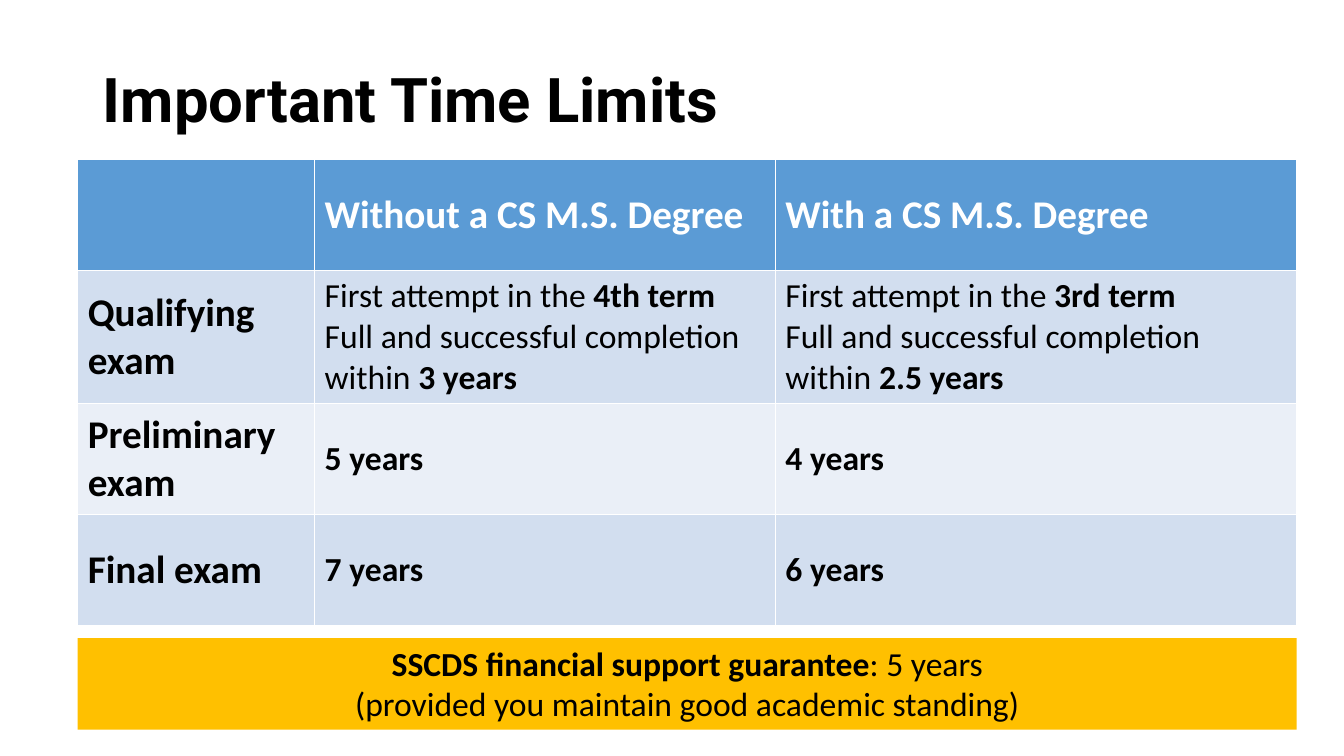
import pptx
import pptx.util
import pptx.dml.color
import pptx.enum.shapes
import pptx.enum.text

Cm = pptx.util.Cm
ANCHOR = pptx.enum.text.MSO_ANCHOR
ALIGN = pptx.enum.text.PP_ALIGN

COLORS = {
    "text": "000000",
    "header_text": "FFFFFF",
    "header": "5B9BD5",
    "band_dark": "D2DEEF",
    "band_light": "EAEFF7",
    "guarantee": "FFC000",
}


def paint(fill, color):
    fill.solid()
    fill.fore_color.rgb = pptx.dml.color.RGBColor.from_string(COLORS[color])


def write(frame, paragraphs, size, color="text", font="Calibri", align=ALIGN.LEFT):
    for index, pieces in enumerate(paragraphs):
        paragraph = frame.paragraphs[0] if index == 0 else frame.add_paragraph()
        paragraph.alignment = align
        for words, bold in pieces:
            run = paragraph.add_run()
            run.text = words
            formats = {"name": font, "size": pptx.util.Pt(size), "bold": bold}
            for key, value in formats.items():
                setattr(run.font, key, value)
            paint(run.font.fill, color)


presentation = pptx.Presentation()
presentation.slide_width = Cm(33.87)
presentation.slide_height = Cm(19.05)
slide = presentation.slides.add_slide(presentation.slide_layouts[5])

left, width = Cm(1.96), Cm(30.72)

heading = slide.shapes.title
placement = {"left": Cm(2.34), "top": Cm(0.74), "width": Cm(29.21), "height": Cm(3.68)}
for key, value in placement.items():
    setattr(heading, key, value)
heading.text_frame.auto_size = pptx.enum.text.MSO_AUTO_SIZE.NONE
heading.text_frame.vertical_anchor = ANCHOR.MIDDLE
write(heading.text_frame, [[("Important Time Limits", True)]], 44, font="Roboto")
heading.text_frame.paragraphs[0].line_spacing = 0.9

exam_limits = [
    ("Qualifying exam", [
        [[("First attempt in the ", False), (term, True)],
         [("Full and successful completion within ", False), (years, True)]]
        for term, years in [("4th term", "3 years"), ("3rd term", "2.5 years")]
    ]),
    ("Preliminary exam", [[[("5 years", True)]], [[("4 years", True)]]]),
    ("Final exam", [[[("7 years", True)]], [[("6 years", True)]]]),
]
degree_headers = ["", "Without a CS M.S. Degree", "With a CS M.S. Degree"]
column_widths = [5.97, 11.61, 13.14]
row_heights = [2.8, 3.1, 2.8, 2.8]

limits = slide.shapes.add_table(4, 3, left, Cm(4.01), width, Cm(sum(row_heights))).table
for column, column_width in zip(limits.columns, column_widths):
    column.width = Cm(column_width)
for row, row_height in zip(limits.rows, row_heights):
    row.height = Cm(row_height)

for index, degree in enumerate(degree_headers):
    header = limits.cell(0, index)
    paint(header.fill, "header")
    header.vertical_anchor = ANCHOR.MIDDLE
    if degree:
        write(header.text_frame, [[(degree, True)]], 28, "header_text")

for row_index, (exam, deadlines) in enumerate(exam_limits, 1):
    for column_index, content in enumerate([[[(exam, True)]]] + deadlines):
        cell = limits.cell(row_index, column_index)
        paint(cell.fill, "band_dark" if row_index % 2 else "band_light")
        cell.vertical_anchor = ANCHOR.MIDDLE
        write(cell.text_frame, content, 24 if column_index else 28)

guarantee = slide.shapes.add_shape(
    pptx.enum.shapes.MSO_SHAPE.RECTANGLE, left, Cm(16.08), width, Cm(2.31))
guarantee.shadow.inherit = False
paint(guarantee.fill, "guarantee")
guarantee.line.fill.background()
guarantee.text_frame.word_wrap = True
guarantee.text_frame.vertical_anchor = ANCHOR.TOP
write(guarantee.text_frame, [
    [("SSCDS financial support guarantee", True), (": 5 years", False)],
    [("(provided you maintain good academic standing)", False)],
], 24, align=ALIGN.CENTER)

presentation.save("out.pptx")
